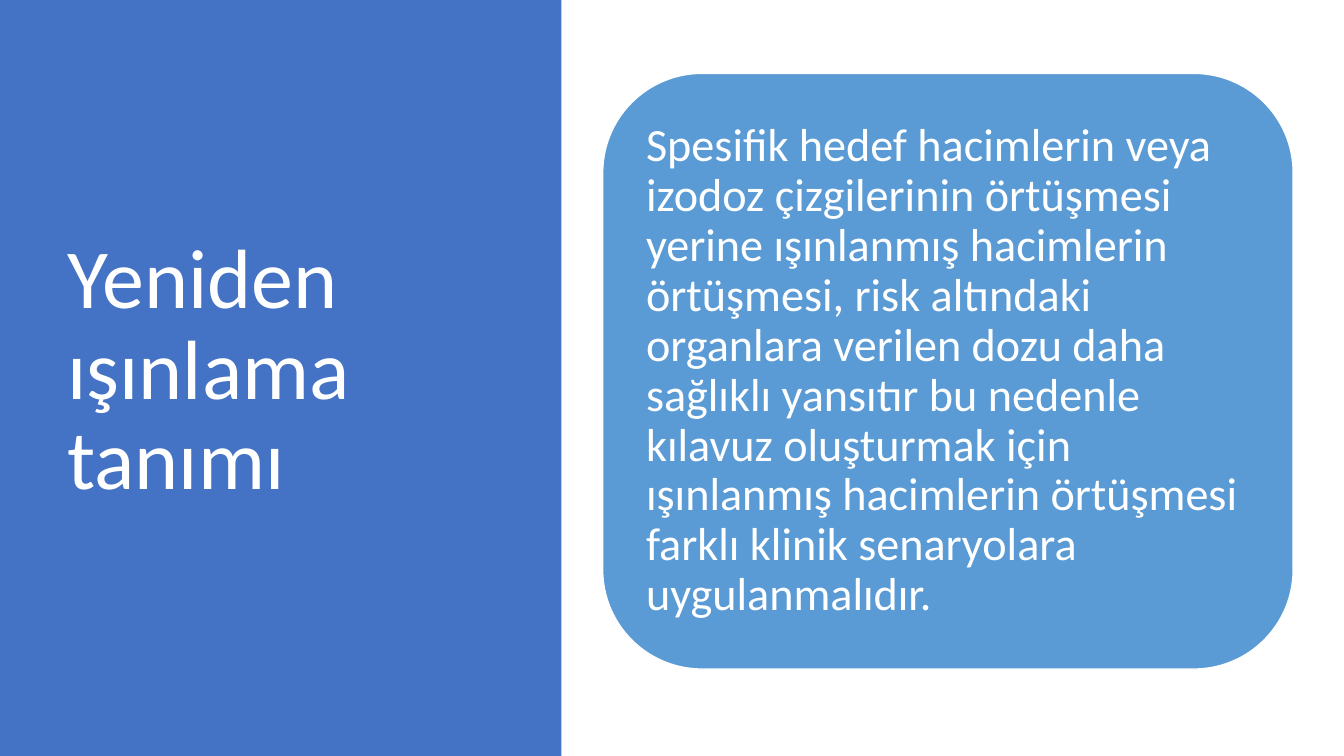
from dataclasses import dataclass

from pptx import Presentation
from pptx.dml.color import RGBColor
from pptx.enum.shapes import MSO_SHAPE
from pptx.enum.text import MSO_ANCHOR, PP_ALIGN
from pptx.util import Cm, Pt

RECTANGLE = MSO_SHAPE.RECTANGLE
ROUNDED = MSO_SHAPE.ROUNDED_RECTANGLE
MIDDLE = MSO_ANCHOR.MIDDLE
LEFT = PP_ALIGN.LEFT


@dataclass(frozen=True)
class Theme:
    font: str = "Calibri"
    panel: RGBColor = RGBColor(0x44, 0x72, 0xC4)
    card: RGBColor = RGBColor(0x5B, 0x9B, 0xD5)
    white: RGBColor = RGBColor(0xFF, 0xFF, 0xFF)
    title_size: int = 60
    body_size: int = 33


theme = Theme()


def write_text(box, text, *, size, color, margins):
    frame = box.text_frame
    frame.word_wrap = True
    frame.vertical_anchor = MIDDLE
    frame.margin_left = frame.margin_right = Cm(margins[0])
    frame.margin_top = frame.margin_bottom = Cm(margins[1])
    para = frame.paragraphs[0]
    para.alignment = LEFT
    para.line_spacing = 0.9
    span = para.add_run()
    span.text = text
    span.font.name = theme.font
    span.font.size = Pt(size)
    span.font.color.rgb = color


def add_block(page, kind, left, top, width, height, fill):
    block = page.shapes.add_shape(kind, Cm(left), Cm(top), Cm(width), Cm(height))
    block.shadow.inherit = False
    block.fill.solid()
    block.fill.fore_color.rgb = fill
    return block


deck = Presentation()
deck.slide_width = Cm(33.87)
deck.slide_height = Cm(19.05)
page = deck.slides.add_slide(deck.slide_layouts[6])

# Left panel
panel = add_block(page, RECTANGLE, 0, 0, 14.15, 19.05, theme.panel)
panel.line.fill.background()

# Title
title = page.shapes.add_textbox(Cm(1.45), Cm(1.73), Cm(10.57), Cm(15.29))
write_text(title, "Yeniden ışınlama tanımı", size=theme.title_size,
           color=theme.white, margins=(0.25, 0.13))

# Definition card
card = add_block(page, ROUNDED, 15.19, 1.85, 17.4, 15.01, theme.card)
card.line.color.rgb = theme.white
card.line.width = Pt(1)
write_text(
    card,
    "Spesifik hedef hacimlerin veya izodoz çizgilerinin örtüşmesi yerine "
    "ışınlanmış hacimlerin örtüşmesi, risk altındaki organlara verilen dozu "
    "daha sağlıklı yansıtır bu nedenle kılavuz oluşturmak için ışınlanmış "
    "hacimlerin örtüşmesi farklı klinik senaryolara uygulanmalıdır.",
    size=theme.body_size, color=theme.white, margins=(0.36, 0.36))

deck.save("out.pptx")
